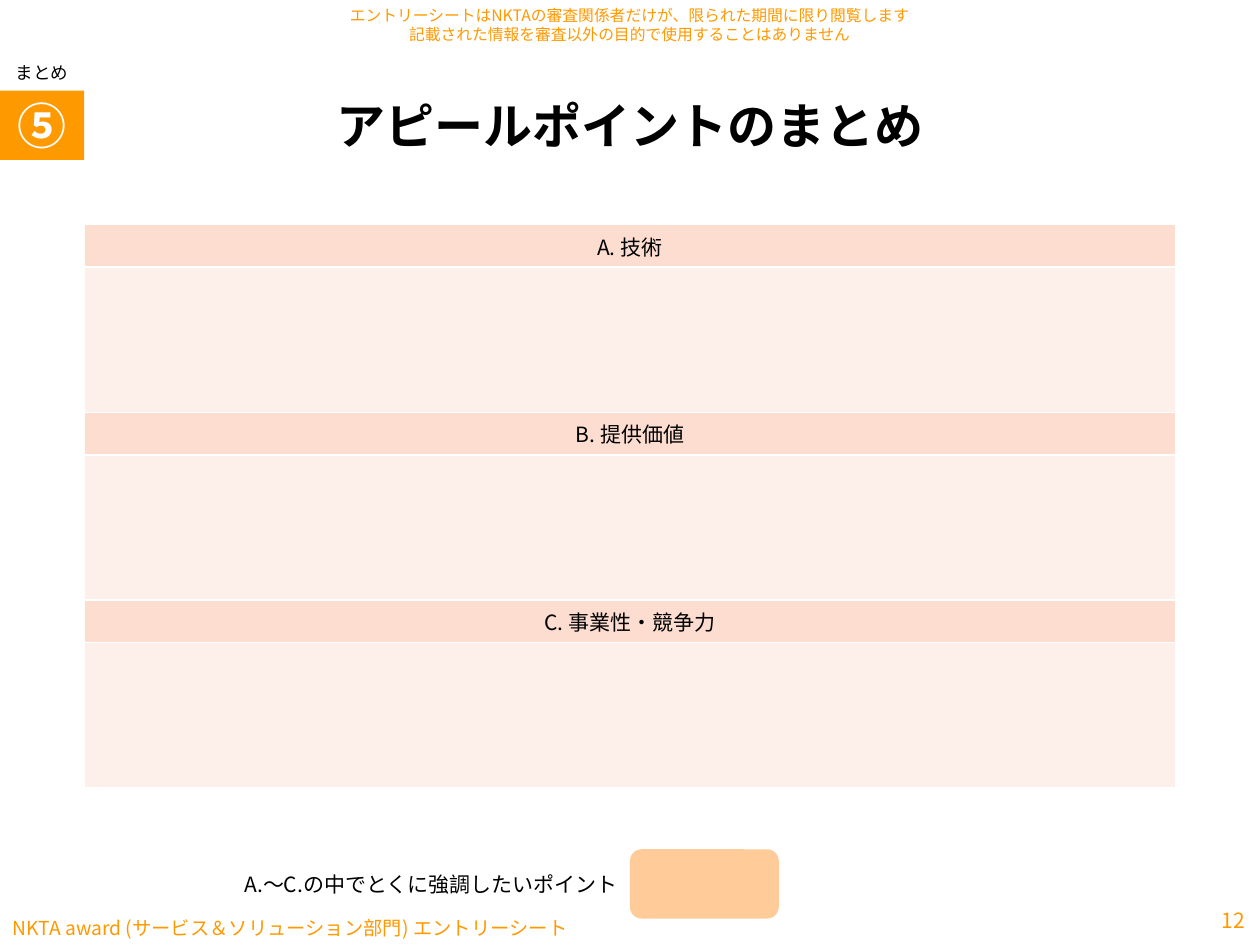
from lxml.etree import SubElement
from pptx import Presentation
from pptx.dml.color import RGBColor
from pptx.enum.shapes import MSO_SHAPE as Shape
from pptx.enum.text import MSO_ANCHOR as Anchor, PP_ALIGN as Align
from pptx.oxml.ns import qn
from pptx.util import Pt

FONT = "Noto Sans CJK JP"
BLACK, WHITE, ORANGE, LIGHT_ORANGE = "000000", "FFFFFF", "FF9900", "FFCC99"
HEADING_FILL, ANSWER_FILL = "FCDDCF", "FDEFE9"
HEADING_HEIGHT, ANSWER_HEIGHT = 24.3, 83.1
TOPICS = ["A. 技術", "B. 提供価値", "C. 事業性・競争力"]


def color(value):
    return RGBColor.from_string(value)


def paint(target, value):
    target.fill.solid()
    target.fill.fore_color.rgb = color(value)


def write(frame, text, size, ink=BLACK, bold=False, align=Align.LEFT, **frame_format):
    """Fill a text frame with one paragraph; line feeds become line breaks."""
    for name, value in frame_format.items():
        setattr(frame, name, value)
    para = frame.paragraphs[0]
    para.text = text.replace("\n", "\v")
    para.alignment = align
    for span in para.runs:
        for name, value in {"name": FONT, "size": Pt(size), "bold": bold}.items():
            setattr(span.font, name, value)
        span.font.color.rgb = color(ink)
        SubElement(span.font._element, qn("a:ea"), typeface=FONT)


def add_title(slide, text, *bounds):
    title = slide.shapes.title
    for name, value in zip(("left", "top", "width", "height"), bounds):
        setattr(title, name, Pt(value))
    write(title.text_frame, text, 28, bold=True, align=Align.CENTER,
          vertical_anchor=Anchor.MIDDLE)


def add_text(slide, text, size, *bounds, **text_format):
    box = slide.shapes.add_textbox(*map(Pt, bounds))
    write(box.text_frame, text, size, word_wrap=True, **text_format)


def add_block(slide, kind, fill, *bounds):
    block = slide.shapes.add_shape(kind, *map(Pt, bounds))
    block.shadow.inherit = False
    block.line.fill.background()
    paint(block, fill)
    return block


def outline_cell(cell):
    properties = cell._tc.get_or_add_tcPr()
    for index, side in enumerate(("lnL", "lnR", "lnT", "lnB")):
        line = properties.makeelement(qn(f"a:{side}"), {"w": str(Pt(1))})
        fill = SubElement(line, qn("a:solidFill"))
        SubElement(fill, qn("a:srgbClr"), val=WHITE)
        properties.insert(index, line)


def add_topic_table(slide, left, top, width):
    """Alternate a heading row and an empty answer row for each topic."""
    count = len(TOPICS)
    height = count * (HEADING_HEIGHT + ANSWER_HEIGHT)
    table = slide.shapes.add_table(
        2 * count, 1, Pt(left), Pt(top), Pt(width), Pt(height)).table
    for index, row in enumerate(table.rows):
        is_answer = index % 2
        cell = row.cells[0]
        row.height = Pt(ANSWER_HEIGHT if is_answer else HEADING_HEIGHT)
        paint(cell, ANSWER_FILL if is_answer else HEADING_FILL)
        outline_cell(cell)
        if not is_answer:
            cell.vertical_anchor = Anchor.MIDDLE
            write(cell.text_frame, TOPICS[index // 2], 12, align=Align.CENTER)


def main():
    deck = Presentation()
    deck.slide_width, deck.slide_height = Pt(720), Pt(540)
    slide = deck.slides.add_slide(deck.slide_layouts[5])

    add_text(slide, "NKTA award (サービス＆ソリューション部門) エントリーシート", 11,
             0, 520.6, 400, 19.4, ink=ORANGE, vertical_anchor=Anchor.MIDDLE)
    add_text(slide, "エントリーシートはNKTAの審査関係者だけが、限られた期間に限り閲覧します\n"
             "記載された情報を審査以外の目的で使用することはありません", 9,
             159.6, 0, 400, 28.1, ink=ORANGE, align=Align.CENTER)
    add_title(slide, "アピールポイントのまとめ", 76.3, 43.2, 567.4, 56.9)

    add_text(slide, "A.～C.の中でとくに強調したいポイント", 12, 100, 491, 260, 28.1,
             align=Align.RIGHT, vertical_anchor=Anchor.MIDDLE)
    add_block(slide, Shape.ROUNDED_RECTANGLE, LIGHT_ORANGE, 360, 485.3, 85, 39.6)
    add_text(slide, "12", 12, 666, 511.2, 52.6, 28.8, ink=ORANGE,
             align=Align.RIGHT, vertical_anchor=Anchor.MIDDLE)

    badge = add_block(slide, Shape.RECTANGLE, ORANGE, 0, 51.8, 48.2, 39.6)
    write(badge.text_frame, "⑤", 28, ink=WHITE, bold=True, align=Align.CENTER,
          vertical_anchor=Anchor.MIDDLE, margin_left=0, margin_right=0,
          margin_top=0, margin_bottom=0)
    add_text(slide, "まとめ", 10, 0, 31.7, 48.2, 15.1, align=Align.CENTER,
             margin_left=0, margin_right=0, margin_top=Pt(3.6), margin_bottom=0)

    add_topic_table(slide, 48.2, 128.2, 623.5)
    deck.save("out.pptx")


if __name__ == "__main__":
    main()
